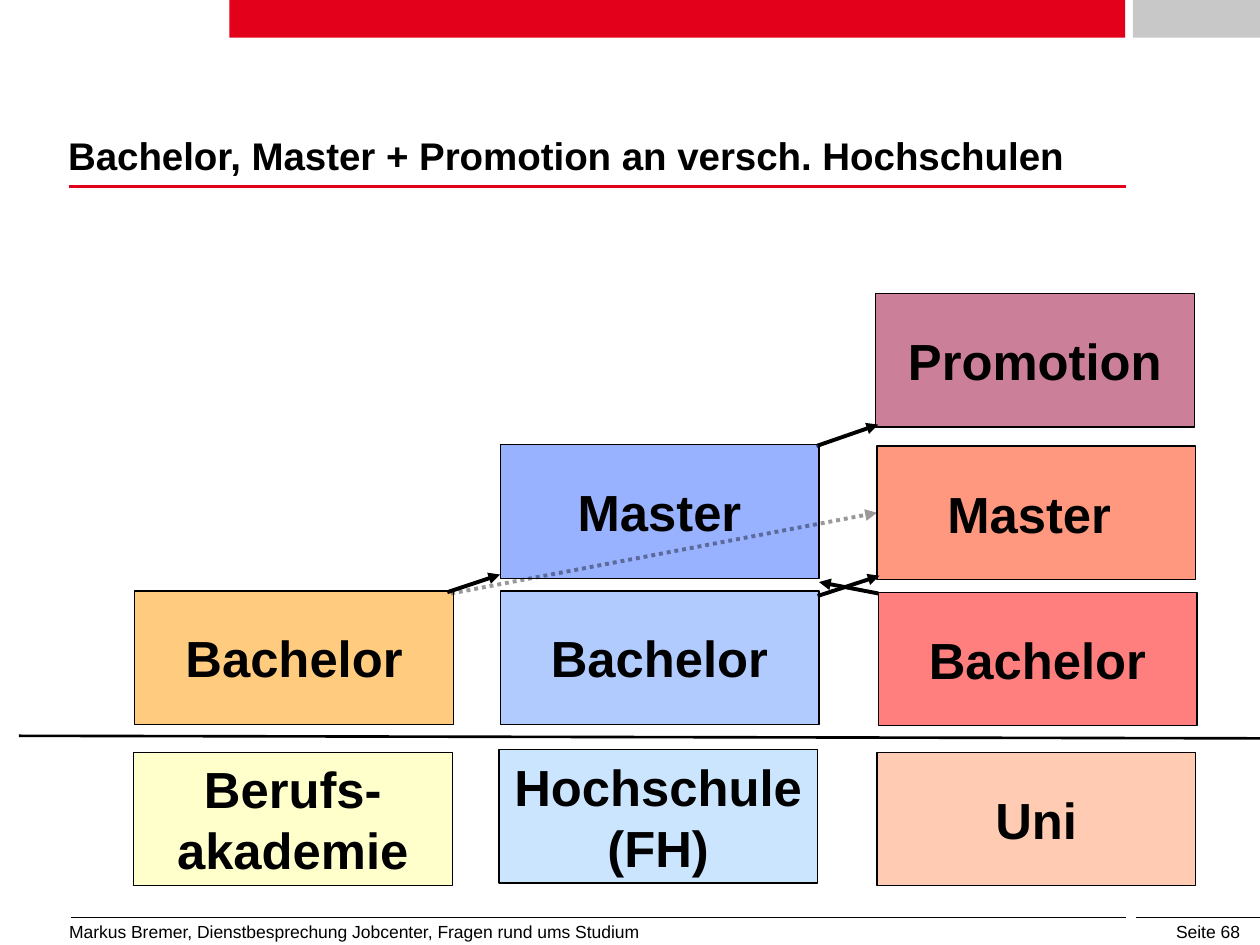
from pptx import Presentation
from pptx.dml.color import RGBColor
from pptx.enum.dml import MSO_LINE_DASH_STYLE as Dash
from pptx.enum.shapes import MSO_CONNECTOR, MSO_SHAPE
from pptx.enum.text import MSO_ANCHOR as Anchor, PP_ALIGN as Align
from pptx.oxml.ns import qn
from pptx.util import Inches, Pt
from lxml.etree import SubElement

BLACK = RGBColor(0x00, 0x00, 0x00)
RED = RGBColor(0xE2, 0x00, 0x1A)
GREY = RGBColor(0xC8, 0xC8, 0xC8)
ORANGE = RGBColor(0xFF, 0x99, 0x00)
YELLOW = RGBColor(0xFF, 0xFF, 0x99)
BLUE = RGBColor(0x66, 0x99, 0xFF)
DEEP_BLUE = RGBColor(0x33, 0x66, 0xFF)
PALE_BLUE = RGBColor(0x99, 0xCC, 0xFF)
BRIGHT_RED = RGBColor(0xFF, 0x00, 0x00)
VERMILION = RGBColor(0xFF, 0x33, 0x00)
WINE = RGBColor(0x99, 0x00, 0x33)
PEACH = RGBColor(0xFF, 0x99, 0x66)

BOX_WIDTH, BOX_HEIGHT = 2.53, 1.06


def set_opacity(fill_element, percent):
    color = fill_element.find(".//" + qn("a:srgbClr"))
    SubElement(color, qn("a:alpha"), val=str(percent * 1000))


class SlideBuilder:
    font_name = "Arial"

    def __init__(self, slide):
        self.slide = slide

    def add_lines(self, frame, lines, size, bold=False, align=Align.LEFT, spacing=None):
        for index, line in enumerate(lines):
            paragraph = frame.add_paragraph() if index else frame.paragraphs[0]
            paragraph.alignment = align
            if spacing:
                paragraph.line_spacing = spacing
            run = paragraph.add_run()
            run.text = line
            run.font.name = self.font_name
            run.font.size = Pt(size)
            run.font.bold = bold
            run.font.color.rgb = BLACK

    def bar(self, left, top, width, height, color):
        shape = self.slide.shapes.add_shape(
            MSO_SHAPE.RECTANGLE, Inches(left), Inches(top), Inches(width), Inches(height))
        shape.shadow.inherit = False
        shape.fill.solid()
        shape.fill.fore_color.rgb = color
        shape.line.fill.background()
        return shape

    def box(self, left, top, color, *lines):
        """Half-transparent outlined box with centred bold text."""
        shape = self.bar(left, top, BOX_WIDTH, BOX_HEIGHT, color)
        set_opacity(shape._element.spPr.find(qn("a:solidFill")), 50)
        shape.line.color.rgb = BLACK
        shape.line.width = Pt(0.75)
        shape.text_frame.word_wrap = False
        shape.text_frame.vertical_anchor = Anchor.MIDDLE
        self.add_lines(shape.text_frame, lines, 29, bold=True, align=Align.CENTER)
        return shape

    def text(self, left, top, width, height, words, size, margin=True,
             anchor=Anchor.TOP, **style):
        frame = self.slide.shapes.add_textbox(
            Inches(left), Inches(top), Inches(width), Inches(height)).text_frame
        frame.word_wrap = True
        frame.vertical_anchor = anchor
        if not margin:
            frame.margin_left = frame.margin_right = 0
            frame.margin_top = frame.margin_bottom = 0
        self.add_lines(frame, [words], size, **style)

    def line(self, start, end, width, color=BLACK):
        points = [Inches(value) for value in (*start, *end)]
        connector = self.slide.shapes.add_connector(MSO_CONNECTOR.STRAIGHT, *points)
        connector.line.color.rgb = color
        connector.line.width = Pt(width)
        SubElement(connector._element.spPr, qn("a:effectLst"))
        return connector

    def arrow(self, start, end, dotted=False):
        connector = self.line(start, end, 2.25)
        outline = connector._element.spPr.find(qn("a:ln"))
        if dotted:
            connector.line.dash_style = Dash.ROUND_DOT
            set_opacity(outline, 40)
        SubElement(outline, qn("a:tailEnd"), type="triangle")
        return connector


def main():
    presentation = Presentation()
    presentation.slide_width = Inches(10)
    presentation.slide_height = Inches(7.5)
    builder = SlideBuilder(presentation.slides.add_slide(presentation.slide_layouts[6]))

    # Header and footer
    builder.bar(1.82, 0, 7.11, 0.3, RED)
    builder.bar(8.99, 0, 1.01, 0.3, GREY)
    builder.line((0.55, 1.48), (8.94, 1.48), 1.5, RED)
    builder.text(8.51, 7.26, 1.43, 0.18, "Seite 68", 10, align=Align.RIGHT)
    builder.line((0.56, 7.28), (8.94, 7.28), 0.5)
    builder.line((9.02, 7.28), (10, 7.28), 0.5)
    builder.text(0.45, 7.26, 8.41, 0.39,
                 "Markus Bremer, Dienstbesprechung Jobcenter, Fragen rund ums Studium", 10)
    builder.text(0.54, 1.09, 8.41, 0.33,
                 "Bachelor, Master + Promotion an versch. Hochschulen", 22,
                 margin=False, anchor=Anchor.BOTTOM, bold=True, spacing=0.9)

    # Degrees above, institutions below
    builder.box(1.07, 4.69, ORANGE, "Bachelor")
    builder.box(3.97, 4.69, BLUE, "Bachelor")
    builder.box(6.97, 4.7, BRIGHT_RED, "Bachelor")
    uni_master = builder.box(6.96, 3.54, VERMILION, "Master ")
    builder.box(6.95, 2.33, WINE, "Promotion")
    builder.box(1.06, 5.97, YELLOW, "Berufs-", "akademie")
    builder.box(3.96, 5.95, PALE_BLUE, "Hochschule", "(FH)")
    builder.box(6.96, 5.97, PEACH, "Uni")
    builder.line((0.15, 5.84), (10, 5.86), 1.5)

    # Possible transitions
    for start, end in (
        ((3.55, 4.7), (3.97, 4.56)),
        ((6.48, 3.54), (6.97, 3.37)),
        ((6.49, 4.73), (6.98, 4.57)),
        ((6.97, 4.71), (6.5, 4.62)),
    ):
        builder.arrow(start, end)
    builder.box(3.97, 3.53, DEEP_BLUE, "Master")
    detour = builder.arrow((3.58, 4.71), (6.97, 4.06), dotted=True)
    detour.end_connect(uni_master, 1)

    presentation.save("out.pptx")


if __name__ == "__main__":
    main()
